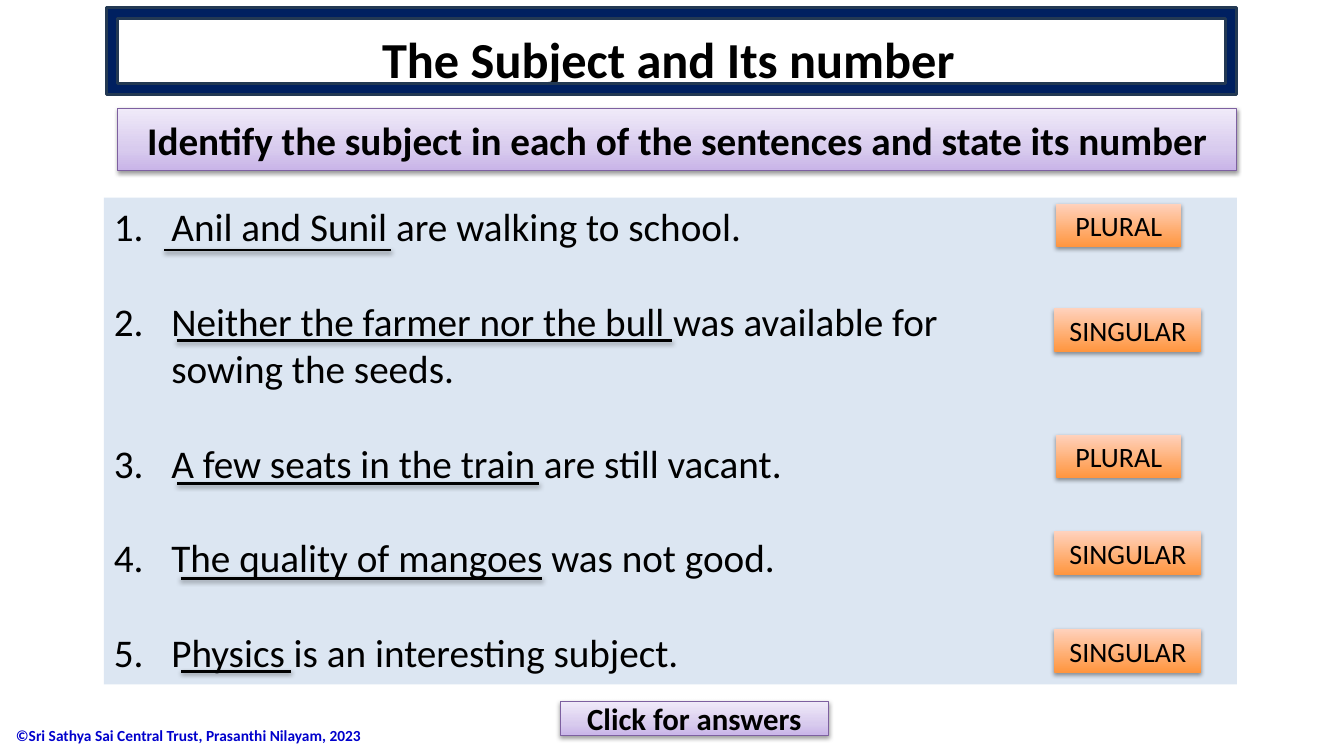
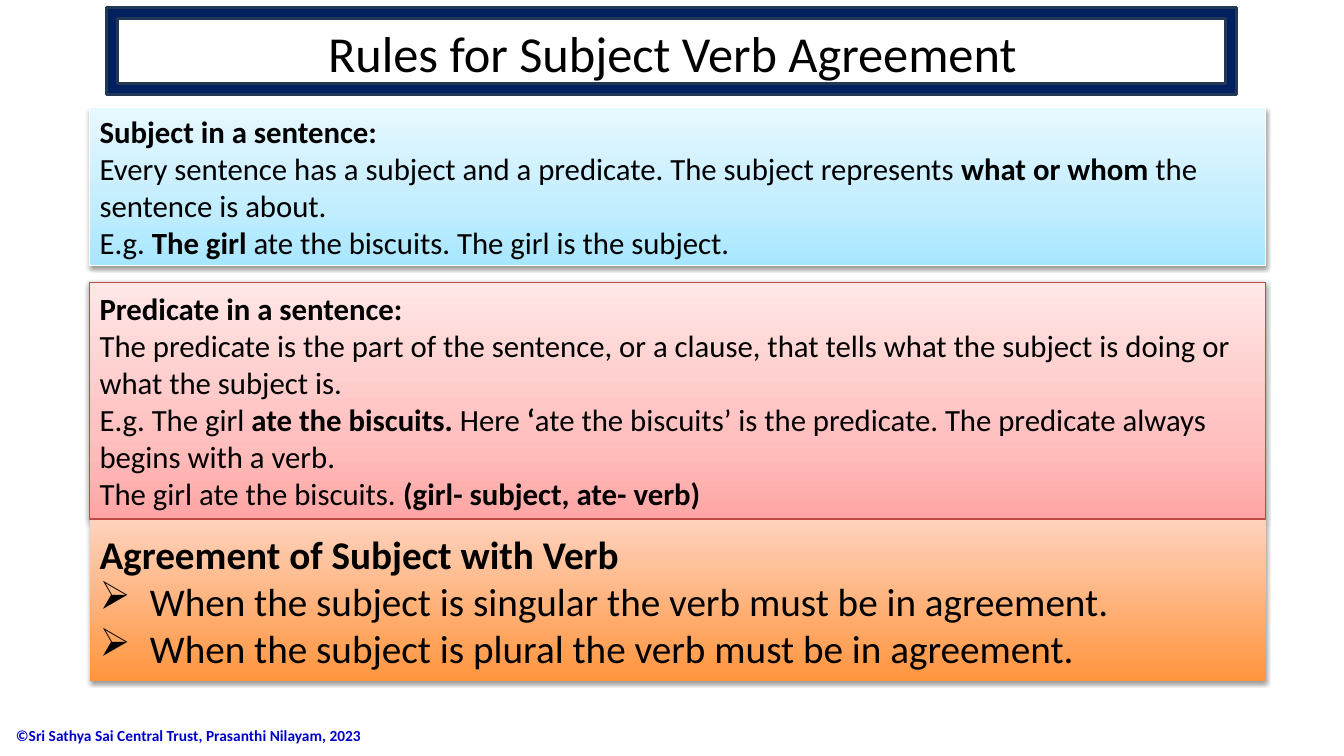
from lxml.etree import SubElement
from pptx import Presentation
from pptx.dml.color import RGBColor
from pptx.enum.shapes import MSO_CONNECTOR, MSO_SHAPE
from pptx.enum.text import MSO_ANCHOR, MSO_AUTO_SIZE, PP_ALIGN
from pptx.oxml import parse_xml
from pptx.oxml.ns import nsdecls, qn
from pptx.util import Cm, Pt

# Shared look
hue = RGBColor.from_string
FONT = "Calibri"
BLACK, NAVY, EDGE, PALE, BLUE = "000000", "002060", "233953", "DCE6F2", "0000CC"
LILAC = [(0, "C9B5E8"), (35, "D8CBEE"), (100, "F0EAF9")]
SKY = [(0, "A7E6FF"), (35, "C1EDFF"), (100, "E7F8FF")]
ROSE = [(0, "FFA6A5"), (35, "FFC0BF"), (100, "FFE7E7")]
AMBER = [(0, "FF953E"), (100, "FFD2BD")]
PURPLE, WHITE, RED = "7D60A0", "FFFFFF", "BF4C48"
SHADE = (f'<a:effectLst {nsdecls("a")}><a:outerShdw blurRad="40000" dist="20000" '
         'dir="5400000" rotWithShape="0"><a:srgbClr val="000000">'
         '<a:alpha val="38000"/></a:srgbClr></a:outerShdw></a:effectLst>')
NUMBER = f'<a:buAutoNum {nsdecls("a")} type="arabicPeriod"/>'
ARROW = f'<a:buChar {nsdecls("a")} char="➢"/>'


def write(shape, *paras, size=22, bold=False, color=BLACK, align=PP_ALIGN.LEFT,
          anchor=MSO_ANCHOR.MIDDLE, gap=0, mark=None, skip=0, hang=1.27):
    """Fill a shape with paragraphs; *stars* switch the weight."""
    frame = shape.text_frame
    frame.word_wrap = True
    frame.auto_size = MSO_AUTO_SIZE.NONE
    frame.vertical_anchor = anchor
    for n, text in enumerate(paras):
        para = frame.add_paragraph() if n else frame.paragraphs[0]
        para.alignment = align
        if n and gap:
            para.space_before = Pt(gap)
        if mark and n >= skip:
            props = para._p.get_or_add_pPr()
            props.set("marL", str(Cm(hang)))
            props.set("indent", str(-Cm(hang)))
            props.append(parse_xml(mark))
        for k, part in enumerate(text.split("*")):
            if part:
                run = para.add_run()
                run.text = part
                font = run.font
                font.name, font.size = FONT, Pt(size)
                font.bold = bold != (k % 2 == 1)
                font.color.rgb = hue(color)


def panel(slide, at, fill, line=None, width=0.75, kind=MSO_SHAPE.RECTANGLE):
    """Add a shape; a list of stops gives a shaded gradient."""
    shape = slide.shapes.add_shape(kind, *map(Cm, at))
    if line:
        shape.line.color.rgb = hue(line)
        shape.line.width = Pt(width)
    else:
        shape.line.fill.background()
    if isinstance(fill, str):
        shape.fill.solid()
        shape.fill.fore_color.rgb = hue(fill)
        shape.shadow.inherit = False
        return shape
    shape.fill.gradient()
    shape.fill.gradient_angle = 90
    props = shape._element.spPr
    stops = props.find(qn("a:gradFill")).find(qn("a:gsLst"))
    stops.clear()
    for pos, color in fill:
        stop = SubElement(stops, qn("a:gs"), pos=str(pos * 1000))
        SubElement(stop, qn("a:srgbClr"), val=color)
    props.append(parse_xml(SHADE))
    return shape


deck = Presentation()
deck.slide_width, deck.slide_height = Cm(33.87), Cm(19.05)

# Title, frame and footer of both slides
slides = []
for text, bold, left, top in [("The Subject and Its number", True, 4, 0.55),
                              ("Rules for Subject Verb Agreement", False, 4.1, 0.4)]:
    slide = deck.slides.add_slide(deck.slide_layouts[5])
    slides.append(slide)
    title = slide.shapes.title
    title.left, title.top, title.width, title.height = map(Cm, (left, top, 25.7, 1.83))
    write(title, text, size=36, bold=bold, align=PP_ALIGN.CENTER)
    panel(slide, (2.69, 0.2, 28.47, 2.18), NAVY, EDGE, 2, MSO_SHAPE.FRAME)
    foot = slide.shapes.add_textbox(*map(Cm, (0.15, 18.03, 9.7, 1)))
    write(foot, "©Sri Sathya Sai Central Trust, Prasanthi Nilayam, 2023",
          size=11, bold=True, color=BLUE)
quiz, rules = slides

# Quiz: sentences, with room on the right for the tags
body = panel(quiz, (2.62, 4.98, 28.55, 12.27), PALE)
body.text_frame.margin_right = Cm(6)
write(body, "Anil and Sunil are walking to school.",
      "Neither the farmer nor the bull was available for sowing the seeds.",
      "A few seats in the train are still vacant.",
      "The quality of mangoes was not good.",
      "Physics is an interesting subject.",
      size=28, anchor=MSO_ANCHOR.TOP, gap=34, mark=NUMBER, hang=1.45)

# Quiz: task and button
for text, size, at in [
        ("Identify the subject in each of the sentences and state its number", 28,
         (2.95, 2.74, 28.22, 1.55)),
        ("Click for answers", 22, (14.12, 17.68, 6.76, 0.86))]:
    write(panel(quiz, at, LILAC, PURPLE), text, size=size, bold=True,
          align=PP_ALIGN.CENTER)

# Quiz: a tag and a subject underline for each sentence
for text, top, start, end, y in [("PLURAL", 5.13, 4.14, 9.86, 6.3),
                                 ("SINGULAR", 7.77, 4.45, 16.94, 8.59),
                                 ("PLURAL", 10.95, 4.47, 13.59, 12.19),
                                 ("SINGULAR", 13.39, 4.55, 13.67, 14.58),
                                 ("SINGULAR", 15.85, 4.57, 7.34, 16.92)]:
    left, wide = (26.62, 3.15) if text == "PLURAL" else (26.57, 3.71)
    write(panel(quiz, (left, top, wide, 1.1), AMBER), text, size=20,
          align=PP_ALIGN.CENTER)
    rule = quiz.shapes.add_connector(MSO_CONNECTOR.STRAIGHT,
                                     *map(Cm, (start, y, end, y)))
    rule.line.color.rgb = hue(BLACK)
    rule.line.width = Pt(2)
    rule._element.spPr.append(parse_xml(SHADE))

# Rules: three panels
left, wide = 2.26, 29.64
write(panel(rules, (left, 2.72, wide, 3.96), SKY, WHITE),
      "*Subject in a sentence:*",
      "Every sentence has a subject and a predicate. The subject represents "
      "*what or whom* the sentence is about.",
      "E.g. *The girl* ate the biscuits. The girl is the subject.")
write(panel(rules, (left, 7.11, wide, 5.97), ROSE, RED),
      "*Predicate in a sentence:*",
      "The predicate is the part of the sentence, or a clause, that tells what "
      "the subject is doing or what the subject is.",
      "E.g. The girl *ate the biscuits.* Here *‘*ate the biscuits’ is the predicate. "
      "The predicate always begins with a verb.",
      "The girl ate the biscuits. *(girl- subject, ate- verb)*")
write(panel(rules, (left, 13.11, wide, 4.04), AMBER),
      "*Agreement of Subject with Verb*",
      "When the subject is singular the verb must be in agreement.",
      "When the subject is plural the verb must be in agreement.",
      size=28, mark=ARROW, skip=1)

deck.save("out.pptx")
